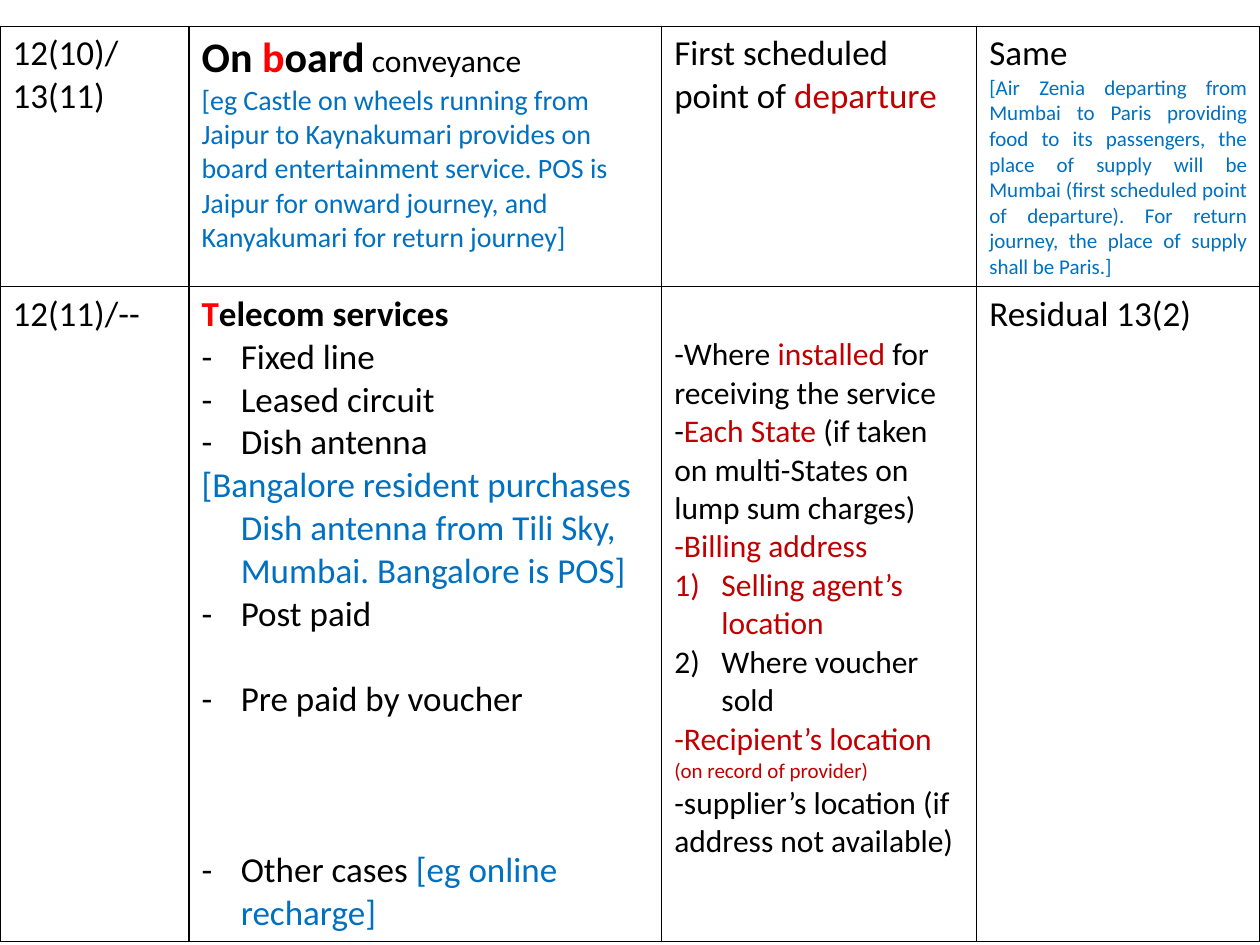
from lxml import etree
from pptx import Presentation
from pptx.dml.color import RGBColor
from pptx.enum.text import PP_ALIGN
from pptx.oxml.ns import qn
from pptx.util import Cm, Pt

JUSTIFY = PP_ALIGN.JUSTIFY
FONT = "Calibri"
COLORS = {"black": "000000", "red": "FF0000", "dark red": "C00000",
          "blue": "0070C0", "white": "FFFFFF"}
COLUMN_WIDTHS = [3.81, 9.53, 6.35, 5.71]
ROW_HEIGHTS = [5.25, 13.2]
TABLE_TOP = 0.53
LINE = 24.4  # height in points of one line of 20 pt text


def run(text, size=20, color="black", bold=False):
    return text, size, color, bold


def para(*runs, **layout):
    """layout: bullet (dash or numbering scheme), hang in cm, before in points, align."""
    return runs, layout


def dash(*runs, before=0):
    return para(*runs, bullet="-", hang=0.79, before=before)


def numbered(text, color):
    return para(run(text, 18, color), bullet="arabicParenR", hang=0.95)


ROWS = [
    [
        [para(run("12(10)/ 13(11)"))],
        [para(run("On ", 24, bold=True), run("b", 24, "red", True),
              run("oard", 24, bold=True), run(" conveyance", 18)),
         para(run("[eg Castle on wheels running from Jaipur to Kaynakumari provides on "
                  "board entertainment service. POS is Jaipur for onward journey, and "
                  "Kanyakumari for return journey]", 16, "blue"))],
        [para(run("First scheduled point of "), run("departure", color="dark red"))],
        [para(run("Same")),
         para(run("[Air Zenia departing from Mumbai to Paris providing food to its "
                  "passengers, the place of supply will be Mumbai (first scheduled point "
                  "of departure). For return journey, the place of supply shall be "
                  "Paris.]", 12, "blue"), align=JUSTIFY)],
    ],
    [
        [para(run("12(11)/--"))],
        [para(run("T", color="red", bold=True), run("elecom services", bold=True)),
         dash(run("Fixed line")),
         dash(run("Leased circuit")),
         dash(run("Dish antenna")),
         para(run("[Bangalore resident purchases Dish antenna from Tili Sky, Mumbai. "
                  "Bangalore is POS]", color="blue"), hang=0.79),
         dash(run("Post paid")),
         dash(run("Pre paid by voucher"), before=LINE),
         dash(run("Other cases "), run("[eg online recharge]", color="blue"),
              before=3 * LINE)],
        [para(run("-Where ", 18), run("installed", 18, "dark red"),
              run(" for receiving the service", 18)),
         para(run("-", 18), run("Each State", 18, "dark red"),
              run(" (if taken on multi-States on lump sum charges)", 18)),
         para(run("-Billing address", 18, "dark red")),
         numbered("Selling agent’s location", "dark red"),
         numbered("Where voucher sold", "black"),
         para(run("-Recipient’s location ", 18, "dark red"),
              run("(on record of provider)", 12, "dark red")),
         para(run("-supplier’s location (if address not available)", 18))],
        [para(run("Residual 13(2)"))],
    ],
]
LOWERED_CELL = (1, 2)  # starts one line below its neighbours


def rgb(name):
    return RGBColor.from_string(COLORS[name])


def set_list_format(paragraph, bullet, hang):
    properties = paragraph._p.get_or_add_pPr()
    if hang:
        properties.set("marL", str(Cm(hang)))
        properties.set("indent", str(-Cm(hang)))
    if bullet == "-":
        etree.SubElement(properties, qn("a:buFont")).set("typeface", FONT)
        etree.SubElement(properties, qn("a:buChar")).set("char", bullet)
    elif bullet:
        etree.SubElement(properties, qn("a:buAutoNum")).set("type", bullet)


def write_paragraph(paragraph, runs, bullet=None, hang=0, before=0, align=None):
    set_list_format(paragraph, bullet, hang)
    if before:
        paragraph.space_before = Pt(before)
    if align is not None:
        paragraph.alignment = align
    for text, size, color, bold in runs:
        piece = paragraph.add_run()
        piece.text = text
        piece.font.name = FONT
        piece.font.size = Pt(size)
        piece.font.bold = bold
        piece.font.color.rgb = rgb(color)


def add_borders(cell):
    properties = cell._tc.get_or_add_tcPr()
    for position, side in enumerate(("a:lnL", "a:lnR", "a:lnT", "a:lnB")):
        line = etree.Element(qn(side), w=str(Pt(1)))
        fill = etree.SubElement(line, qn("a:solidFill"))
        etree.SubElement(fill, qn("a:srgbClr")).set("val", COLORS["black"])
        properties.insert(position, line)


def fill_cell(cell, paragraphs):
    cell.fill.solid()
    cell.fill.fore_color.rgb = rgb("white")
    add_borders(cell)
    frame = cell.text_frame
    for index, (runs, layout) in enumerate(paragraphs):
        paragraph = frame.add_paragraph() if index else frame.paragraphs[0]
        write_paragraph(paragraph, runs, **layout)


def main():
    deck = Presentation()
    deck.slide_width, deck.slide_height = Cm(25.4), Cm(19.05)
    slide = deck.slides.add_slide(deck.slide_layouts[6])
    table = slide.shapes.add_table(
        len(ROWS), len(COLUMN_WIDTHS), Cm(0), Cm(TABLE_TOP),
        Cm(sum(COLUMN_WIDTHS)), Cm(sum(ROW_HEIGHTS))).table
    table.first_row = table.horz_banding = False
    for column, width in zip(table.columns, COLUMN_WIDTHS):
        column.width = Cm(width)
    for row, height, contents in zip(table.rows, ROW_HEIGHTS, ROWS):
        row.height = Cm(height)
        for cell, paragraphs in zip(row.cells, contents):
            fill_cell(cell, paragraphs)
    lowered = table.cell(*LOWERED_CELL)
    lowered.margin_top += Pt(LINE)
    deck.save("out.pptx")


if __name__ == "__main__":
    main()
